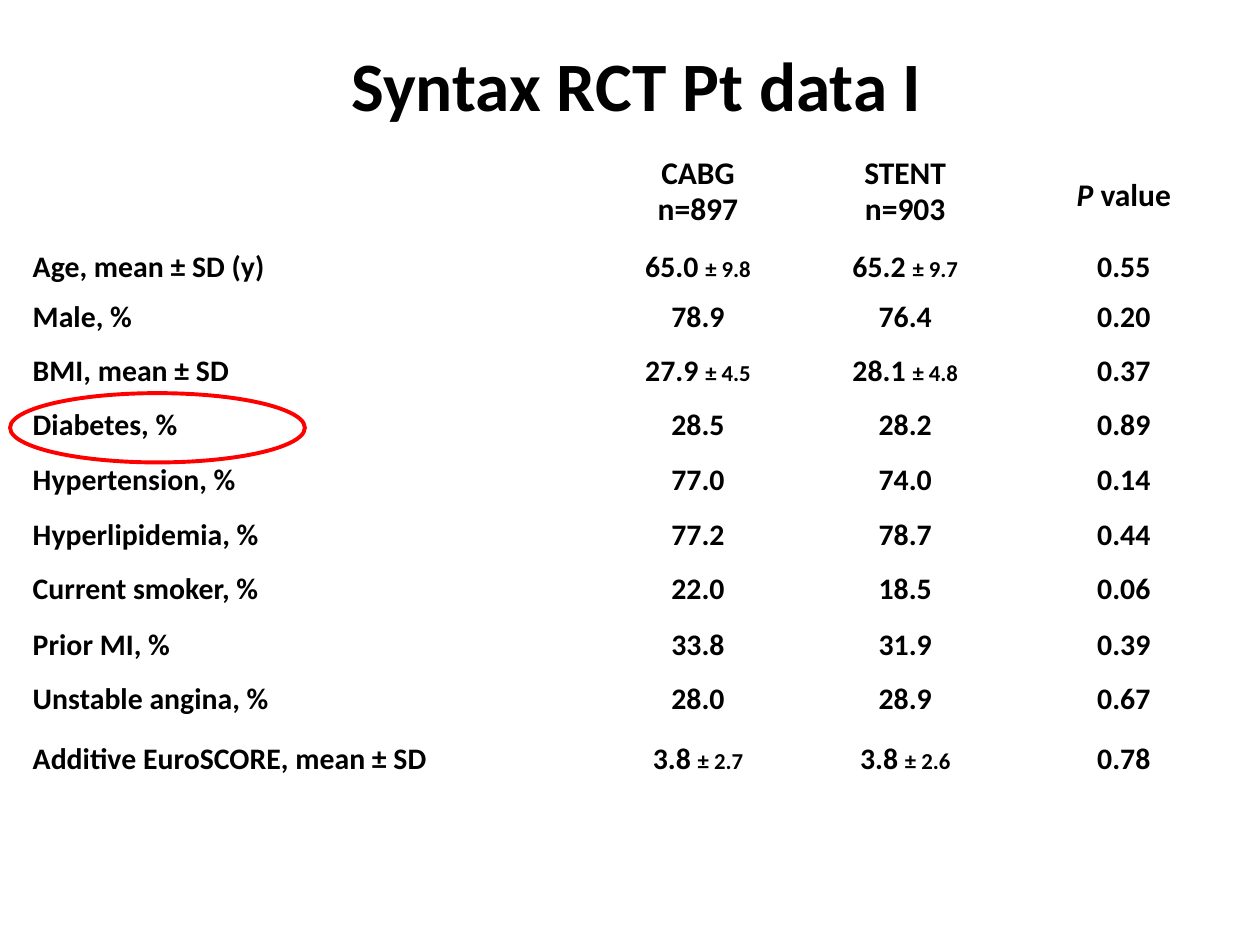
from pptx import Presentation
from pptx.dml.color import RGBColor
from pptx.enum.shapes import MSO_SHAPE
from pptx.enum.text import MSO_ANCHOR, PP_ALIGN
from pptx.util import Inches, Pt

ELLIPSE = MSO_SHAPE.OVAL
MIDDLE, TOP = MSO_ANCHOR.MIDDLE, MSO_ANCHOR.TOP
LEFT, CENTER = PP_ALIGN.LEFT, PP_ALIGN.CENTER

COL_WIDTHS = [4.56, 1.64, 1.65, 1.82]
ROW_HEIGHTS = [0.75, 0.4, 0.43, 0.43, 0.43, 0.44, 0.43, 0.44, 0.43, 0.48, 0.43]
HEADERS = ["", "CABG\nn=897", "STENT\nn=903", "P value"]
PATIENT_DATA = [
    ("Age, mean ± SD (y)", "65.0 ± 9.8", "65.2 ± 9.7", "0.55"),
    ("Male, %", "78.9", "76.4", "0.20"),
    ("BMI, mean ± SD", "27.9 ± 4.5", "28.1 ± 4.8", "0.37"),
    ("Diabetes, %", "28.5", "28.2", "0.89"),
    ("Hypertension, %", "77.0", "74.0", "0.14"),
    ("Hyperlipidemia, %", "77.2", "78.7", "0.44"),
    ("Current smoker, %", "22.0", "18.5", "0.06"),
    ("Prior MI, %", "33.8", "31.9", "0.39"),
    ("Unstable angina, %", "28.0", "28.9", "0.67"),
    ("Additive EuroSCORE, mean ± SD", "3.8 ± 2.7", "3.8 ± 2.6", "0.78"),
]


def color(value):
    return RGBColor.from_string(value)


def add_text(p, text, size=17, italic=False, fill="000000"):
    for i, line in enumerate(text.split("\n")):
        if i:
            p.add_line_break()
        r = p.add_run()
        r.text = line
        r.font.name = "Calibri"
        r.font.size = Pt(size)
        r.font.bold = True
        r.font.italic = italic
        r.font.color.rgb = color(fill)


def add_title(s, text):
    sp = s.shapes.add_textbox(Inches(0.78), Inches(0.39), Inches(8.67), Inches(0.55))
    tf = sp.text_frame
    tf.word_wrap = True
    tf.vertical_anchor = MIDDLE
    p = tf.paragraphs[0]
    p.alignment = CENTER
    add_text(p, text, size=39.6)


def format_cell(cell, align=CENTER, anchor=TOP):
    cell.fill.background()
    cell.vertical_anchor = anchor
    p = cell.text_frame.paragraphs[0]
    p.alignment = align
    p.line_spacing = 0.95
    p.space_before = p.space_after = Pt(6)
    return p


def fill_header(table):
    for col, text in enumerate(HEADERS):
        is_p_value = text == "P value"
        p = format_cell(table.cell(0, col), anchor=MIDDLE if is_p_value else TOP)
        if is_p_value:
            add_text(p, "P", size=18, italic=True)
            add_text(p, " value", size=18)
        elif text:
            add_text(p, text, size=18)


def fill_row(table, row, values):
    label, *numbers = values
    add_text(format_cell(table.cell(row, 0), align=LEFT), label)
    for col, number in enumerate(numbers, 1):
        p = format_cell(table.cell(row, col))
        mean, sign, deviation = number.partition("±")
        add_text(p, mean)
        if sign:
            add_text(p, sign + deviation, size=13)


def add_patient_table(s):
    frame = s.shapes.add_table(
        len(ROW_HEIGHTS), len(COL_WIDTHS),
        Inches(0.16), Inches(1.18), Inches(9.67), Inches(5.09),
    )
    table = frame.table
    table.first_row = table.horz_banding = False
    for column, width in zip(table.columns, COL_WIDTHS):
        column.width = Inches(width)
    for row, height in zip(table.rows, ROW_HEIGHTS):
        row.height = Inches(height)
    fill_header(table)
    for row, values in enumerate(PATIENT_DATA, 1):
        fill_row(table, row, values)


def add_highlight(s):
    sp = s.shapes.add_shape(ELLIPSE, Inches(0.08), Inches(3.12), Inches(2.34), Inches(0.55))
    sp.shadow.inherit = False
    sp.fill.background()
    sp.line.color.rgb = color("FF0000")
    sp.line.width = Pt(2.25)


def main():
    prs = Presentation()
    prs.slide_width, prs.slide_height = Inches(10), Inches(7.5)
    s = prs.slides.add_slide(prs.slide_layouts[6])
    add_title(s, "Syntax RCT Pt data I ")
    add_patient_table(s)
    add_highlight(s)
    prs.save("out.pptx")


if __name__ == "__main__":
    main()
